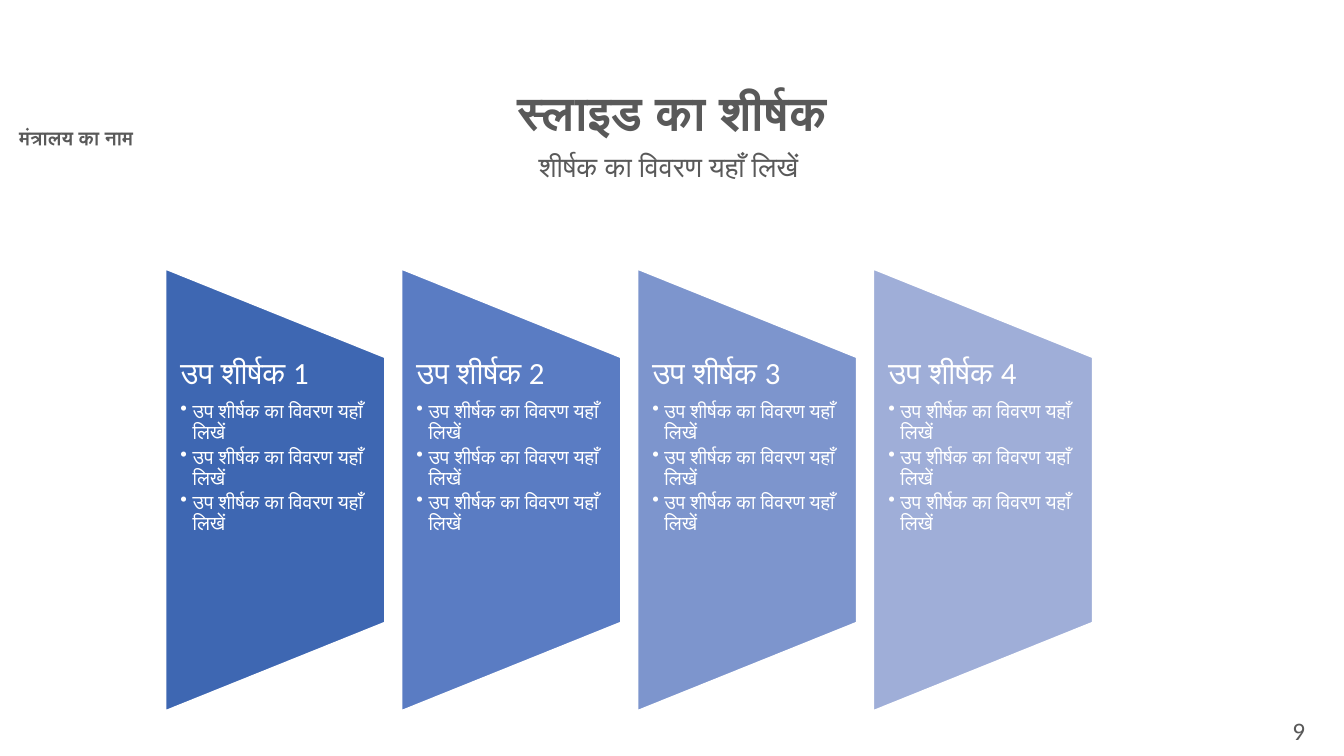
from lxml import etree
from pptx import Presentation
from pptx.dml.color import RGBColor
from pptx.enum import shapes, text
from pptx.oxml.ns import qn
from pptx.util import Inches, Pt

GREY, WHITE = "595959", "FFFFFF"
CARD_FILLS = ["3E67B2", "5A7CC3", "7D95CD", "9FAED8"]
CARD_LEFT, CARD_STEP = 1.64, 2.34
CARD_WIDTH, CARD_HEIGHT, CARD_MIDDLE = 2.18, 4.39, 4.86
DETAIL = "उप शीर्षक का विवरण यहाँ लिखें"


def colour(value):
    """Turn a hex string into a colour."""
    return RGBColor.from_string(value)


def add_bullet(paragraph):
    """Give a paragraph a hanging bullet."""
    properties = paragraph._p.get_or_add_pPr()
    properties.set("marL", str(Inches(0.12)))
    properties.set("indent", str(-Inches(0.12)))
    etree.SubElement(properties, qn("a:buChar")).set("char", "•")


def write(paragraph, content, size, hue=GREY, font="Calibri", bold=False,
          align=text.PP_ALIGN.CENTER, spacing=0.9, after=0, bullet=False):
    """Write formatted text into a paragraph."""
    if bullet:
        paragraph.level = 1
        add_bullet(paragraph)
    paragraph.alignment = align
    paragraph.line_spacing = spacing
    paragraph.space_before = Pt(0)
    paragraph.space_after = Pt(after)
    run = paragraph.add_run()
    run.text = content
    run.font.name = font
    run.font.size = Pt(size)
    run.font.bold = bold
    run.font.color.rgb = colour(hue)


def add_box(slide, left, top, width, height):
    """Add a wrapping text box and return its text frame."""
    box = slide.shapes.add_textbox(
        Inches(left), Inches(top), Inches(width), Inches(height))
    box.text_frame.word_wrap = True
    return box.text_frame


def add_title(slide, content):
    """Place and fill the title placeholder."""
    title = slide.shapes.title
    title.left, title.top = Inches(1.86), Inches(0.84)
    title.width, title.height = Inches(9.61), Inches(0.55)
    title.text_frame.auto_size = text.MSO_AUTO_SIZE.NONE
    title.text_frame.vertical_anchor = text.MSO_ANCHOR.TOP
    write(title.text_frame.paragraphs[0], content, 34, bold=True)


def add_card(slide, number, fill):
    """Add a sideways trapezoid with its heading and three details."""
    left = CARD_LEFT + (number - 1) * CARD_STEP
    panel = slide.shapes.add_shape(
        shapes.MSO_SHAPE.FLOWCHART_MANUAL_OPERATION,
        Inches(left + (CARD_WIDTH - CARD_HEIGHT) / 2),
        Inches(CARD_MIDDLE - CARD_WIDTH / 2),
        Inches(CARD_HEIGHT), Inches(CARD_WIDTH))
    panel.rotation = 270
    panel.shadow.inherit = False
    panel.fill.solid()
    panel.fill.fore_color.rgb = colour(fill)
    panel.line.color.rgb = colour(WHITE)
    panel.line.width = Pt(1.5)

    body = add_box(slide, left, 3.55, CARD_WIDTH, 2.63)
    body.margin_left = body.margin_right = Inches(0.15)
    body.margin_top = body.margin_bottom = Inches(0)
    write(body.paragraphs[0], f"उप शीर्षक {number}", 22, hue=WHITE,
          align=text.PP_ALIGN.LEFT, after=7.7)
    for _ in range(3):
        write(body.add_paragraph(), DETAIL, 14, hue=WHITE,
              align=text.PP_ALIGN.LEFT, after=2.1, bullet=True)


def main():
    """Build and save the slide."""
    deck = Presentation()
    deck.slide_width, deck.slide_height = Inches(13.33), Inches(7.5)
    slide = deck.slides.add_slide(deck.slide_layouts[5])

    ministry = add_box(slide, -0.11, 1.23, 1.73, 0.35)
    write(ministry.paragraphs[0], "मंत्रालय का नाम", 14, font="Roboto", bold=True)
    add_title(slide, "स्लाइड का शीर्षक")
    subtitle = add_box(slide, 1.86, 1.47, 9.61, 0.63)
    write(subtitle.paragraphs[0], "शीर्षक का विवरण यहाँ लिखें ", 20)
    for number, fill in enumerate(CARD_FILLS, 1):
        add_card(slide, number, fill)
    page = add_box(slide, 12.42, 7.05, 0.92, 0.45)
    write(page.paragraphs[0], "9", 18, spacing=1.0)

    deck.save("out.pptx")


if __name__ == "__main__":
    main()
